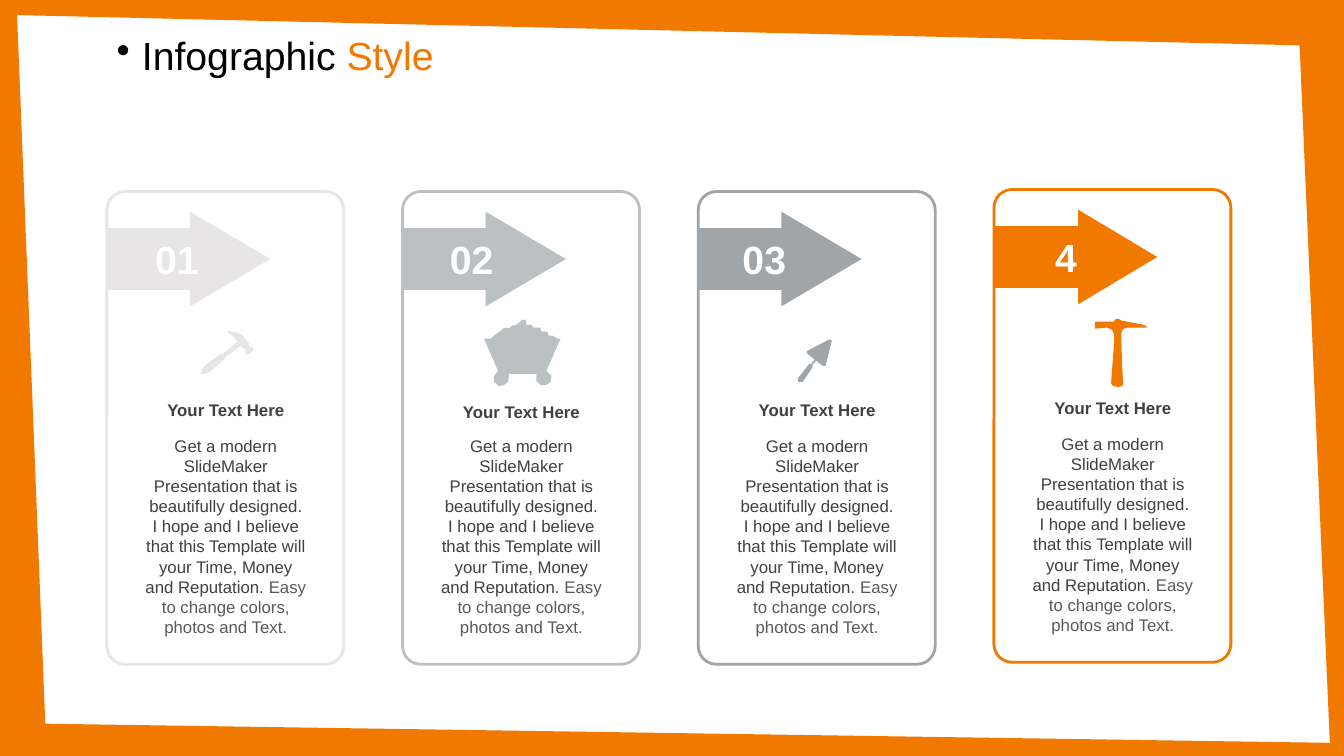
from pptx import Presentation, util as u
from pptx.dml.color import RGBColor
from pptx.enum import shapes, text
from pptx.oxml.ns import qn
from lxml import etree

ORANGE = RGBColor(0xF2, 0x79, 0x00)
PALE = RGBColor(0xE7, 0xE5, 0xE6)
SILVER = RGBColor(0xBB, 0xC0, 0xC3)
STEEL = RGBColor(0xA0, 0xA5, 0xAA)
WHITE = RGBColor(0xFF, 0xFF, 0xFF)
BLACK = RGBColor(0, 0, 0)
DARK = RGBColor(0x40, 0x40, 0x40)
GREY = RGBColor(0x59, 0x59, 0x59)

WIDTH, HEIGHT = 13.33, 7.5
MARGIN = 1.06
PITCH = WIDTH * 0.22
CARD_W, CARD_H = 2.35, 4.69
HUNDREDTH = u.Inches(0.01)

deck = Presentation()
deck.slide_width, deck.slide_height = u.Inches(WIDTH), u.Inches(HEIGHT)
slide = deck.slides.add_slide(deck.slide_layouts[6])


def add_outline(contours, color):
    """Filled outline; points are in hundredths of an inch."""
    builder = slide.shapes.build_freeform(*contours[0][0], scale=HUNDREDTH)
    builder.add_line_segments(contours[0][1:])
    for contour in contours[1:]:
        builder.move_to(*contour[0])
        builder.add_line_segments(contour[1:])
    outline = builder.convert_to_shape()
    outline.shadow.inherit = False
    outline.fill.solid()
    outline.fill.fore_color.rgb = color
    outline.line.fill.background()


def add_text(left, top, width, height, runs, size, bold=False, centered=True):
    """Text box with one paragraph of (wording, colour) runs."""
    box = slide.shapes.add_textbox(*map(u.Inches, (left, top, width, height)))
    box.text_frame.word_wrap = True
    if centered:
        box.text_frame.auto_size = text.MSO_AUTO_SIZE.SHAPE_TO_FIT_TEXT
    paragraph = box.text_frame.paragraphs[0]
    paragraph.alignment = text.PP_ALIGN.CENTER if centered else text.PP_ALIGN.LEFT
    paragraph.font.name, paragraph.font.size = "Arial", u.Pt(size)
    paragraph.font.bold = bold
    for wording, color in runs:
        run = paragraph.add_run()
        run.text = wording
        run.font.color.rgb = color
    return paragraph


# Slanted frame around the slide
add_outline([
    [(0, 0), (1333, 0), (1333, 750), (0, 750), (0, 0)],
    [(17, 15), (45, 718), (1319, 737), (1289, 45), (17, 15)],
], ORANGE)

# Bulleted title
title = add_text(MARGIN, 0.31, WIDTH - MARGIN, 0.79,
                 [("Infographic ", BLACK), ("Style", ORANGE)], 28, centered=False)
title.line_spacing, title.space_before = 0.9, u.Pt(10)
title_props = title._p.get_or_add_pPr()
title_props.set("marL", str(u.Inches(0.25)))
title_props.set("indent", str(-u.Inches(0.25)))
bullet = etree.Element(qn("a:buChar"), char="•")
title_props.find(qn("a:defRPr")).addprevious(bullet)

# Cards: number, its offset, colour, top, heading offset, arrow head length
cards = [
    ("01", 0.34, PALE, 1.90, 2.02, 0.846),
    ("02", 0.33, SILVER, 1.90, 2.04, 0.846),
    ("03", 0.30, STEEL, 1.90, 2.02, 0.846),
    ("4", 0.36, ORANGE, 1.88, 2.02, 0.836),
]
body = [
    ("Get a modern SlideMaker Presentation that is beautifully designed. "
     "I hope and I believe that this Template will your Time, Money "
     "and Reputation. ", DARK),
    ("Easy to change colors, photos and Text.", GREY),
]
for column, (number, number_dx, color, top, heading_dy, head) in enumerate(cards):
    left = MARGIN + column * PITCH
    card = slide.shapes.add_shape(
        shapes.MSO_SHAPE.ROUNDED_RECTANGLE,
        *map(u.Inches, (left, top, CARD_W, CARD_H)))
    card.adjustments[0] = 0.077
    card.fill.solid()
    card.fill.fore_color.rgb = WHITE
    card.line.color.rgb = color
    card.line.width = u.Pt(2)
    card.shadow.inherit = False

    arrow = slide.shapes.add_shape(
        shapes.MSO_SHAPE.RIGHT_ARROW,
        *map(u.Inches, (left, top + 0.2, 1.62, 0.94)))
    arrow.adjustments[0], arrow.adjustments[1] = 0.651, head
    arrow.fill.solid()
    arrow.fill.fore_color.rgb = color
    arrow.line.fill.background()
    arrow.shadow.inherit = False

    add_text(left + number_dx, top + 0.39, 0.71, 0.57, [(number, WHITE)], 28, bold=True)
    add_text(left + 0.28, top + heading_dy, 1.8, 0.3,
             [("Your Text Here", DARK)], 12, bold=True)
    add_text(left + 0.28, top + 2.37, 1.8, 2.12, body, 12)

# Tool icons
hammer = [
    (252, 347), (250, 344), (248, 344), (246, 343), (247, 341), (241, 333),
    (236, 330), (229, 329), (227, 328), (226, 329), (226, 330), (229, 332),
    (232, 334), (234, 337), (236, 339), (221, 351), (219, 351), (203, 363),
    (200, 367), (199, 371), (203, 371), (208, 369), (223, 356), (224, 354),
    (239, 343), (241, 346), (243, 346), (244, 347), (243, 349), (245, 352),
    (249, 350), (252, 347)]
cart = [
    (544, 333), (548, 333), (550, 334), (553, 336), (556, 336), (542, 368),
    (547, 373), (546, 379), (542, 382), (536, 382), (532, 378), (532, 371),
    (505, 371), (504, 379), (500, 382), (495, 383), (490, 379), (490, 373),
    (494, 368), (480, 336), (482, 336), (487, 336), (491, 332), (497, 328),
    (499, 326), (502, 325), (505, 326), (508, 323), (513, 322), (514, 321),
    (517, 318), (522, 317), (522, 322), (527, 322), (529, 325), (536, 325),
    (537, 329), (543, 329), (544, 333)]
trowel_blade = [
    (819, 363), (818, 363), (816, 363), (801, 351), (800, 350), (800, 349),
    (801, 348), (822, 337), (824, 337), (825, 338), (819, 362), (819, 363)]
trowel_neck = [(810, 354), (804, 362), (805, 363), (812, 355), (811, 353), (810, 354)]
trowel_handle = [
    (805, 366), (806, 364), (806, 363), (804, 361), (803, 361), (801, 363),
    (791, 376), (792, 379), (796, 379), (805, 366)]
pickaxe = [
    (1086, 326), (1086, 319), (1105, 319), (1106, 317), (1109, 316),
    (1112, 318), (1133, 322), (1136, 323), (1138, 325), (1118, 325),
    (1115, 326), (1113, 328), (1112, 331), (1113, 363), (1114, 381),
    (1113, 383), (1109, 384), (1104, 383), (1102, 380), (1105, 340),
    (1105, 332), (1103, 327), (1098, 325), (1088, 326), (1086, 326)]
for icon, color in [(hammer, PALE), (cart, SILVER), (trowel_blade, STEEL),
                    (trowel_neck, STEEL), (trowel_handle, STEEL), (pickaxe, ORANGE)]:
    add_outline([icon], color)

deck.save("out.pptx")
